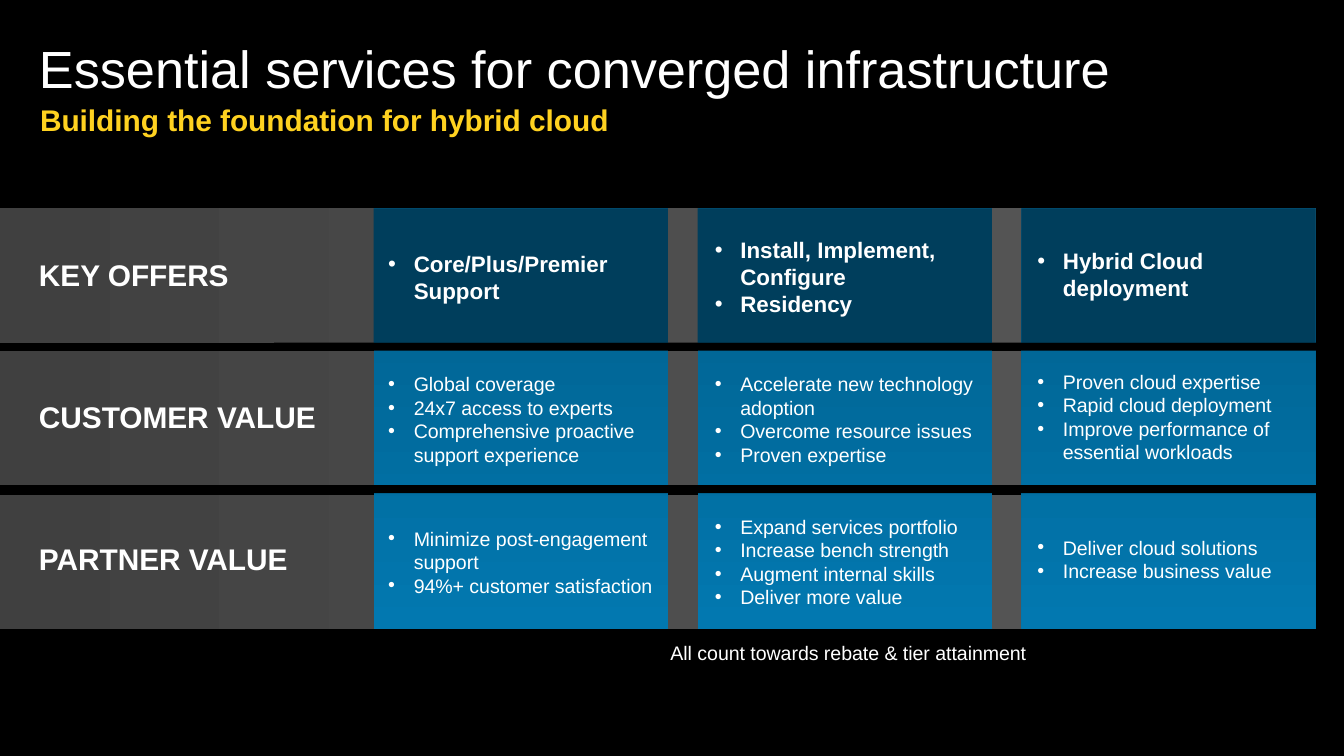
from dataclasses import dataclass
from typing import NamedTuple

from lxml.etree import SubElement
from pptx import Presentation
from pptx.dml.color import RGBColor as Rgb
from pptx.enum.shapes import MSO_SHAPE as Shape
from pptx.enum.text import MSO_ANCHOR as Anchor, MSO_AUTO_SIZE as AutoSize, PP_ALIGN as Align
from pptx.oxml.ns import qn
from pptx.util import Emu, Pt

PX = 9144  # EMU in one px, at 100 px to the inch
PAGE_WIDTH = 1000 * PX
PAGE_HEIGHT = PAGE_WIDTH * 9 // 16
COLORS = {
    "black": "000000", "white": "FFFFFF", "yellow": "FFD220",
    "gray_dark": "404040", "gray_light": "595959",
    "blue_top": "005E8A", "blue_bottom": "0278B0", "navy": "003E5C",
}
ROW_TOPS = (155, 261, 368)
ROW_PITCH, ROW_HEIGHT, ROW_WIDTH = 106, 100, 979
COLUMN_LEFT, COLUMN_PITCH, COLUMN_WIDTH, COLUMN_HEIGHT = 278, 241, 219, 313
DEFAULT_INSETS = (10, 5, 10, 5)


class Rect(NamedTuple):
    left: int
    top: int
    width: int
    height: int

    def emu(self) -> list[Emu]:
        return [Emu(value * PX) for value in self]


@dataclass(frozen=True)
class Style:
    size: float
    color: str = "white"
    bold: bool = False
    bullet: bool = False
    anchor: Anchor = Anchor.MIDDLE
    align: Align = Align.LEFT
    insets: tuple[int, int, int, int] = DEFAULT_INSETS
    spacing: float | Pt | None = None


@dataclass(frozen=True)
class Column:
    text_left: int
    text_top: int
    cells: tuple[tuple[str, ...], ...]


TITLE = Style(28, anchor=Anchor.BOTTOM, insets=(0, 5, 0, 5))
SUBTITLE = Style(16, "yellow", bold=True, anchor=Anchor.TOP, spacing=0.9)
ROW_LABEL = Style(16, bold=True, insets=(0, 0, 0, 0), spacing=Pt(12))
OFFER = Style(12, bold=True, bullet=True)
VALUE = Style(10.5, bullet=True)
FOOTNOTE = Style(10.5, align=Align.CENTER, insets=(20, 15, 15, 15), spacing=0.9)

LABELS = ("KEY OFFERS", "CUSTOMER VALUE", "PARTNER VALUE")
COLUMNS = (
    Column(279, 156, (
        ("Core/Plus/Premier Support",),
        ("Global coverage", "24x7 access to experts",
         "Comprehensive proactive support experience"),
        ("Minimize post-engagement support", "94%+ customer satisfaction"),
    )),
    Column(522, 156, (
        ("Install, Implement, Configure", "Residency"),
        ("Accelerate new technology adoption", "Overcome resource issues",
         "Proven expertise"),
        ("Expand services portfolio", "Increase bench strength",
         "Augment internal skills", "Deliver more value"),
    )),
    Column(762, 154, (
        ("Hybrid Cloud deployment",),
        ("Proven cloud expertise", "Rapid cloud deployment",
         "Improve performance of essential workloads"),
        ("Deliver cloud solutions", "Increase business value"),
    )),
)


def rgb(name: str) -> Rgb:
    return Rgb.from_string(COLORS[name])


def add_block(page, rect: Rect, *colors: str, angle: int = 0) -> None:
    """Draw a borderless rectangle: one colour is solid, two make a gradient."""
    block = page.shapes.add_shape(Shape.RECTANGLE, *rect.emu())
    block.shadow.inherit = False
    block.line.fill.background()
    if len(colors) == 1:
        block.fill.solid()
        block.fill.fore_color.rgb = rgb(colors[0])
        return
    block.fill.gradient()
    block.fill.gradient_angle = angle
    for position, (stop, color) in enumerate(zip(block.fill.gradient_stops, colors)):
        stop.position = position
        stop.color.rgb = rgb(color)


def add_bullet(para) -> None:
    properties = para._p.get_or_add_pPr()
    indent = 19 * PX
    properties.set("marL", str(indent))
    properties.set("indent", str(-indent))
    color = SubElement(properties, qn("a:buClr"))
    SubElement(color, qn("a:srgbClr"), val=COLORS["white"])
    SubElement(properties, qn("a:buFont"), typeface="Arial")
    SubElement(properties, qn("a:buChar"), char="•")


def write(box, lines: tuple[str, ...], style: Style) -> None:
    frame = box.text_frame
    left, top, right, bottom = (Emu(inset * PX) for inset in style.insets)
    frame_format = {
        "word_wrap": True, "auto_size": AutoSize.NONE, "vertical_anchor": style.anchor,
        "margin_left": left, "margin_top": top,
        "margin_right": right, "margin_bottom": bottom,
    }
    for name, value in frame_format.items():
        setattr(frame, name, value)
    font_format = {"name": "Arial", "size": Pt(style.size), "bold": style.bold}
    for index, line in enumerate(lines):
        para = frame.add_paragraph() if index else frame.paragraphs[0]
        if style.bullet:
            add_bullet(para)
        para.alignment = style.align
        if style.spacing is not None:
            para.line_spacing = style.spacing
        span = para.add_run()
        span.text = line
        for name, value in font_format.items():
            setattr(span.font, name, value)
        span.font.color.rgb = rgb(style.color)


def add_text(page, rect: Rect, lines: tuple[str, ...], style: Style) -> None:
    write(page.shapes.add_textbox(*rect.emu()), lines, style)


def add_title(page, rect: Rect, text: str) -> None:
    title = page.shapes.title
    title.left, title.top, title.width, title.height = rect.emu()
    write(title, (text,), TITLE)


def add_grid(page) -> None:
    for top in ROW_TOPS:
        add_block(page, Rect(0, top, ROW_WIDTH, ROW_HEIGHT), "gray_dark", "gray_light")
    for index, column in enumerate(COLUMNS):
        left = COLUMN_LEFT + index * COLUMN_PITCH
        add_block(page, Rect(left, ROW_TOPS[0], COLUMN_WIDTH, COLUMN_HEIGHT),
                  "blue_top", "blue_bottom", angle=270)
        add_block(page, Rect(left, ROW_TOPS[0], COLUMN_WIDTH, ROW_HEIGHT), "navy")
        for row, lines in enumerate(column.cells):
            rect = Rect(column.text_left, column.text_top + row * ROW_PITCH, 218, ROW_HEIGHT)
            add_text(page, rect, lines, VALUE if row else OFFER)
    for left, top in ((204, 255), (207, 361)):
        add_block(page, Rect(left, top, 784, 6), "black")
    for row, label in enumerate(LABELS):
        add_text(page, Rect(29, 186 + row * ROW_PITCH, 218, 46), (label,), ROW_LABEL)


def main() -> None:
    deck = Presentation()
    deck.slide_width, deck.slide_height = Emu(PAGE_WIDTH), Emu(PAGE_HEIGHT)
    page = deck.slides.add_slide(deck.slide_layouts.get_by_name("Title Only"))
    page.background.fill.solid()
    page.background.fill.fore_color.rgb = rgb("black")
    add_title(page, Rect(29, 27, 870, 52), "Essential services for converged infrastructure")
    add_text(page, Rect(20, 74, 941, 34), ("Building the foundation for hybrid cloud",), SUBTITLE)
    add_grid(page)
    add_text(page, Rect(446, 479, 366, 15),
             ("All count towards rebate & tier attainment",), FOOTNOTE)
    deck.save("out.pptx")


if __name__ == "__main__":
    main()
